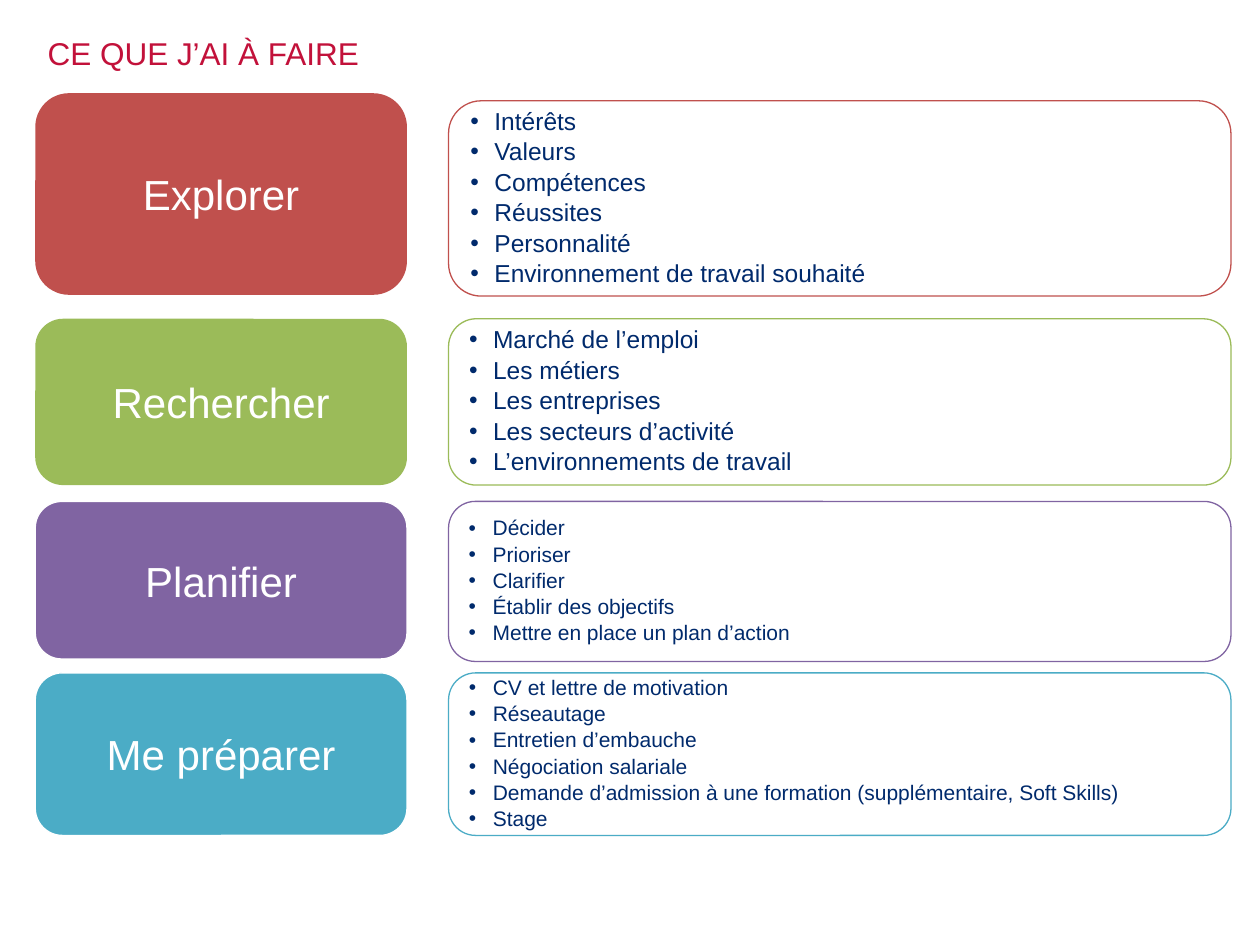
from lxml import etree
from pptx import Presentation
from pptx.dml.color import RGBColor
from pptx.enum.shapes import MSO_SHAPE
from pptx.enum.text import MSO_ANCHOR, PP_ALIGN
from pptx.oxml.ns import qn
from pptx.util import Inches, Pt

ROUNDED = MSO_SHAPE.ROUNDED_RECTANGLE
MIDDLE = MSO_ANCHOR.MIDDLE
LEFT, CENTER = PP_ALIGN.LEFT, PP_ALIGN.CENTER

FONT = "Arial"
WHITE, NAVY, CRIMSON = "FFFFFF", "002A6C", "C2113A"
BULLET_INDENT = Inches(0.19)

LABEL_LEFT, LABEL_WIDTH = 0.28, 2.95
DETAIL_LEFT, DETAIL_WIDTH = 3.56, 6.21

# name, colour, outlined label, label (top, height), detail (top, height), text size, items
STEPS = [
    ("Explorer", "C0504D", False, (0.74, 1.6), (0.8, 1.55), 14,
     ["Intérêts", "Valeurs", "Compétences", "Réussites", "Personnalité",
      "Environnement de travail souhaité"]),
    ("Rechercher", "9BBB59", False, (2.53, 1.32), (2.53, 1.32), 14,
     ["Marché de l’emploi", "Les métiers", "Les entreprises",
      "Les secteurs d’activité", "L’environnements de travail"]),
    ("Planifier", "8064A2", True, (3.98, 1.25), (3.98, 1.27), 12,
     ["Décider", "Prioriser", "Clarifier", "Établir des objectifs",
      "Mettre en place un plan d’action"]),
    ("Me préparer", "4BACC6", True, (5.34, 1.29), (5.34, 1.29), 12,
     ["CV et lettre de motivation", "Réseautage", "Entretien d’embauche",
      "Négociation salariale",
      "Demande d’admission à une formation (supplémentaire, Soft Skills)",
      "Stage"]),
]


def color(value):
    return RGBColor.from_string(value)


def add_span(para, text, size, tint):
    span = para.add_run()
    span.text = text
    span.font.name = FONT
    span.font.size = Pt(size)
    span.font.color.rgb = color(tint)


def add_bullet(para):
    props = para._p.get_or_add_pPr()
    props.set("marL", str(BULLET_INDENT))
    props.set("indent", str(-BULLET_INDENT))
    tint = etree.SubElement(props, qn("a:buClr"))
    etree.SubElement(tint, qn("a:srgbClr"), val=NAVY)
    etree.SubElement(props, qn("a:buFont"), typeface=FONT)
    etree.SubElement(props, qn("a:buChar"), char="•")


def add_rounded_box(page, left, top, width, height, fill=None, line=None):
    box = page.shapes.add_shape(
        ROUNDED, Inches(left), Inches(top), Inches(width), Inches(height))
    box.adjustments[0] = 0.167
    box.shadow.inherit = False
    if fill:
        box.fill.solid()
        box.fill.fore_color.rgb = color(fill)
    else:
        box.fill.background()
    if line:
        box.line.color.rgb = color(line)
        box.line.width = Pt(0.75)
    else:
        box.line.fill.background()
    box.text_frame.word_wrap = True
    box.text_frame.vertical_anchor = MIDDLE
    return box


def add_title(page, left, top, width, height):
    box = page.shapes.add_textbox(
        Inches(left), Inches(top), Inches(width), Inches(height))
    box.text_frame.word_wrap = True
    add_span(box.text_frame.paragraphs[0], "CE QUE J’AI À FAIRE", 18, CRIMSON)


def add_label(page, left, top, width, height, name, fill, line):
    box = add_rounded_box(page, left, top, width, height, fill, line)
    para = box.text_frame.paragraphs[0]
    para.alignment = CENTER
    add_span(para, name, 24, WHITE)


def add_details(page, left, top, width, height, items, size, line):
    box = add_rounded_box(page, left, top, width, height, line=line)
    frame = box.text_frame
    for index, item in enumerate(items):
        para = frame.add_paragraph() if index else frame.paragraphs[0]
        para.alignment = LEFT
        para.line_spacing = 0.9
        para.space_after = Pt(round(size / 6, 1))
        add_bullet(para)
        add_span(para, item, size, NAVY)


def main():
    deck = Presentation()
    deck.slide_width, deck.slide_height = Inches(10), Inches(7.5)
    page = deck.slides.add_slide(deck.slide_layouts[6])
    add_title(page, 0.28, 0.22, 9.17, 0.57)
    for name, tint, outlined, label, detail, size, items in STEPS:
        add_label(page, LABEL_LEFT, label[0], LABEL_WIDTH, label[1],
                  name, tint, WHITE if outlined else None)
        add_details(page, DETAIL_LEFT, detail[0], DETAIL_WIDTH, detail[1],
                    items, size, tint)
    deck.save("out.pptx")


if __name__ == "__main__":
    main()
